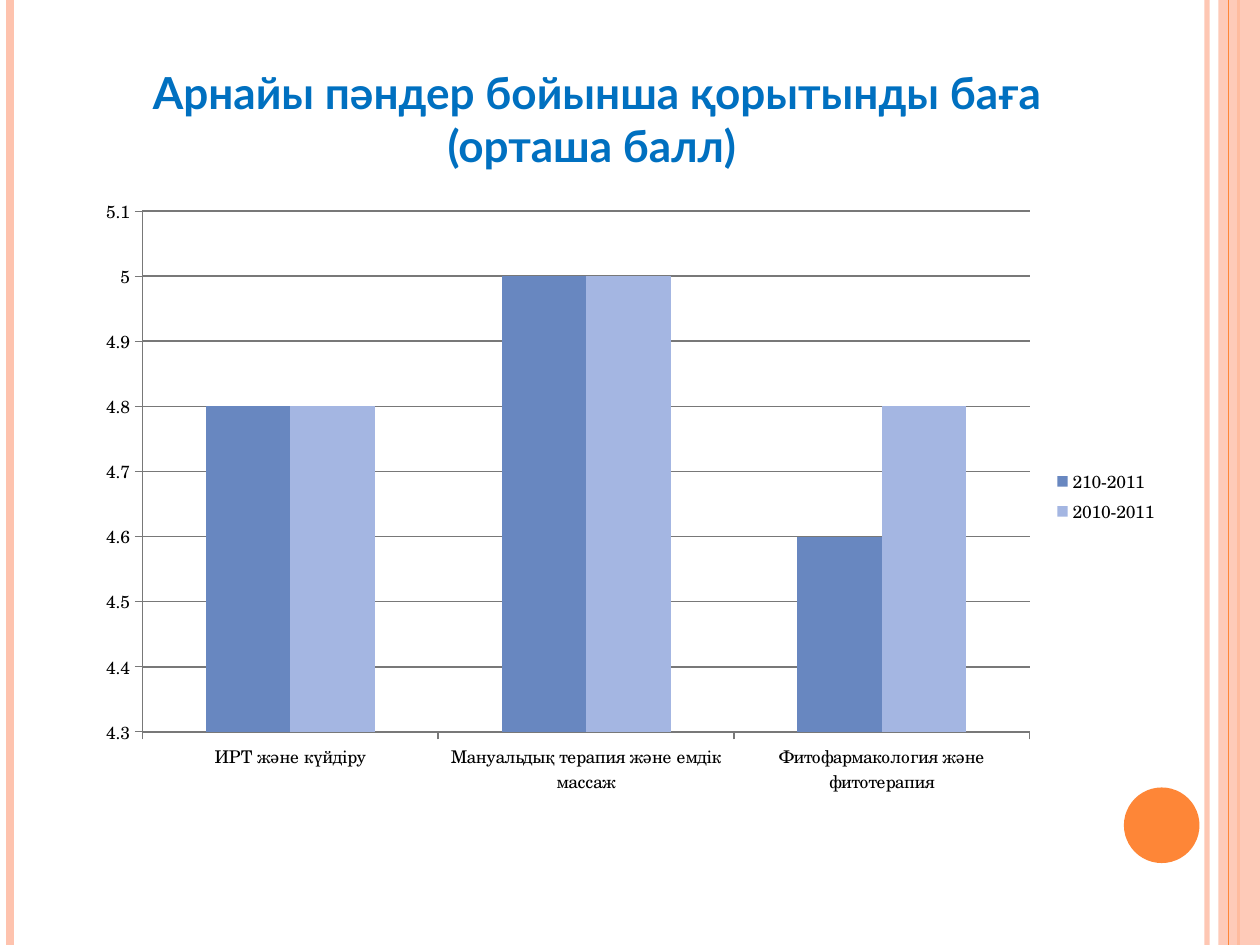
from dataclasses import dataclass

import pptx
import pptx.chart.data
import pptx.dml.color
import pptx.enum.chart
import pptx.enum.shapes
import pptx.enum.text
import pptx.oxml
import pptx.oxml.ns
import pptx.util
from pptx.util import Inches

PEACH = "FEC3AE"
ORANGE = "FE8637"
GRAY = "787878"
SLIDE_HEIGHT = 7.5


@dataclass
class Stripe:
    x: float
    width: float
    color: str
    opacity: int = 100


@dataclass
class Series:
    name: str
    values: tuple[float, ...]
    color: str


BACK_STRIPES = [
    Stripe(9.58, 3, PEACH, 93),
    Stripe(0.08, 4.5, PEACH),
    Stripe(9.83, 1.5, ORANGE),
]
FRONT_STRIPE = Stripe(9.75, 0.75, ORANGE)
CATEGORIES = [
    "ИРТ және күйдіру",
    "Мануальдық терапия және емдік массаж",
    "Фитофармакология және фитотерапия",
]
SERIES = [
    Series("210-2011", (4.8, 5, 4.6), "6887C0"),
    Series("2010-2011", (4.8, 5, 4.8), "A4B6E2"),
]


def rgb(color: str) -> pptx.dml.color.RGBColor:
    return pptx.dml.color.RGBColor.from_string(color)


def set_opacity(element, percent: int) -> None:
    for color in element.iter(pptx.oxml.ns.qn("a:srgbClr")):
        alpha = pptx.oxml.parse_xml(
            f'<a:alpha {pptx.oxml.ns.nsdecls("a")} val="{percent * 1000}"/>')
        color.append(alpha)


def add_stripe(slide, stripe: Stripe) -> None:
    connector = slide.shapes.add_connector(
        pptx.enum.shapes.MSO_CONNECTOR.STRAIGHT,
        Inches(stripe.x), 0, Inches(stripe.x), Inches(SLIDE_HEIGHT))
    connector.line.color.rgb = rgb(stripe.color)
    connector.line.width = pptx.util.Pt(stripe.width)
    properties = connector._element.spPr
    if stripe.opacity < 100:
        set_opacity(properties, stripe.opacity)
    properties.append(pptx.oxml.parse_xml(
        f'<a:effectLst {pptx.oxml.ns.nsdecls("a")}/>'))


def add_plain_shape(slide, kind, left: float, top: float, width: float,
                    height: float, color: str, opacity: int = 100) -> None:
    shape = slide.shapes.add_shape(
        kind, Inches(left), Inches(top), Inches(width), Inches(height))
    shape.shadow.inherit = False
    shape.fill.solid()
    shape.fill.fore_color.rgb = rgb(color)
    shape.line.fill.background()
    if opacity < 100:
        set_opacity(shape._element.spPr, opacity)


def format_title(title) -> None:
    title.left, title.top = Inches(0.78), Inches(0.55)
    title.width, title.height = Inches(7.92), Inches(0.86)
    frame = title.text_frame
    frame.text = "Арнайы пәндер бойынша қорытынды баға (орташа балл) "
    frame.word_wrap = True
    frame.auto_size = pptx.enum.text.MSO_AUTO_SIZE.NONE
    frame.vertical_anchor = pptx.enum.text.MSO_ANCHOR.BOTTOM
    paragraph = frame.paragraphs[0]
    paragraph.alignment = pptx.enum.text.PP_ALIGN.CENTER
    font = paragraph.runs[0].font
    font.name = "Lato"
    font.size = pptx.util.Pt(25.2)
    font.bold = True
    font.color.rgb = rgb("0070C0")


def set_plot_area(chart, x: float, y: float, width: float, height: float) -> None:
    """Fix the inner plot area, in fractions of the chart frame."""
    plot_area = chart._chartSpace.chart.plotArea
    for layout in plot_area.findall(pptx.oxml.ns.qn("c:layout")):
        plot_area.remove(layout)
    plot_area.insert(0, pptx.oxml.parse_xml(
        f'<c:layout {pptx.oxml.ns.nsdecls("c")}><c:manualLayout>'
        '<c:layoutTarget val="inner"/><c:xMode val="edge"/><c:yMode val="edge"/>'
        f'<c:x val="{x}"/><c:y val="{y}"/><c:w val="{width}"/><c:h val="{height}"/>'
        '</c:manualLayout></c:layout>'))


def add_score_chart(slide) -> None:
    data = pptx.chart.data.CategoryChartData()
    data.categories = CATEGORIES
    for series in SERIES:
        data.add_series(series.name, series.values)
    chart = slide.shapes.add_chart(
        pptx.enum.chart.XL_CHART_TYPE.COLUMN_CLUSTERED,
        Inches(0.7), Inches(1.48), Inches(8.59), Inches(4.92), data).chart
    chart.has_title = False
    chart.font.name = "TeX Gyre Schola"
    chart.font.size = pptx.util.Pt(10)
    chart.font.color.rgb = rgb("000000")
    chart.has_legend = True
    chart.legend.position = pptx.enum.chart.XL_LEGEND_POSITION.RIGHT
    chart.legend.include_in_layout = False

    plot = chart.plots[0]
    plot.gap_width = 75 * len(SERIES)
    plot.overlap = 0
    plot.vary_by_categories = False
    for drawn, series in zip(plot.series, SERIES):
        drawn.format.fill.solid()
        drawn.format.fill.fore_color.rgb = rgb(series.color)
        drawn.invert_if_negative = False

    for axis in (chart.category_axis, chart.value_axis):
        axis.major_tick_mark = pptx.enum.chart.XL_TICK_MARK.OUTSIDE
        axis.format.line.color.rgb = rgb(GRAY)
        axis.format.line.width = pptx.util.Pt(0.75)
    scale = chart.value_axis
    scale.minimum_scale, scale.maximum_scale = 4.3, 5.1
    scale.major_unit = 0.1
    scale.tick_labels.number_format = "General"
    scale.tick_labels.number_format_is_linked = False
    gridline = scale.major_gridlines.format.line
    gridline.color.rgb = rgb(GRAY)
    gridline.width = pptx.util.Pt(1)
    set_plot_area(chart, 0.05, 0.04, 0.82, 0.84)


def main() -> None:
    presentation = pptx.Presentation()
    presentation.slide_width = Inches(10)
    presentation.slide_height = Inches(SLIDE_HEIGHT)
    slide = presentation.slides.add_slide(presentation.slide_layouts[5])
    shapes = pptx.enum.shapes.MSO_SHAPE
    for stripe in BACK_STRIPES:
        add_stripe(slide, stripe)
    add_plain_shape(slide, shapes.RECTANGLE, 9.67, 0, 0.33, SLIDE_HEIGHT, PEACH, 87)
    add_stripe(slide, FRONT_STRIPE)
    add_plain_shape(slide, shapes.OVAL, 8.92, 6.25, 0.6, 0.6, ORANGE)
    format_title(slide.shapes.title)
    add_score_chart(slide)
    presentation.save("out.pptx")


if __name__ == "__main__":
    main()
